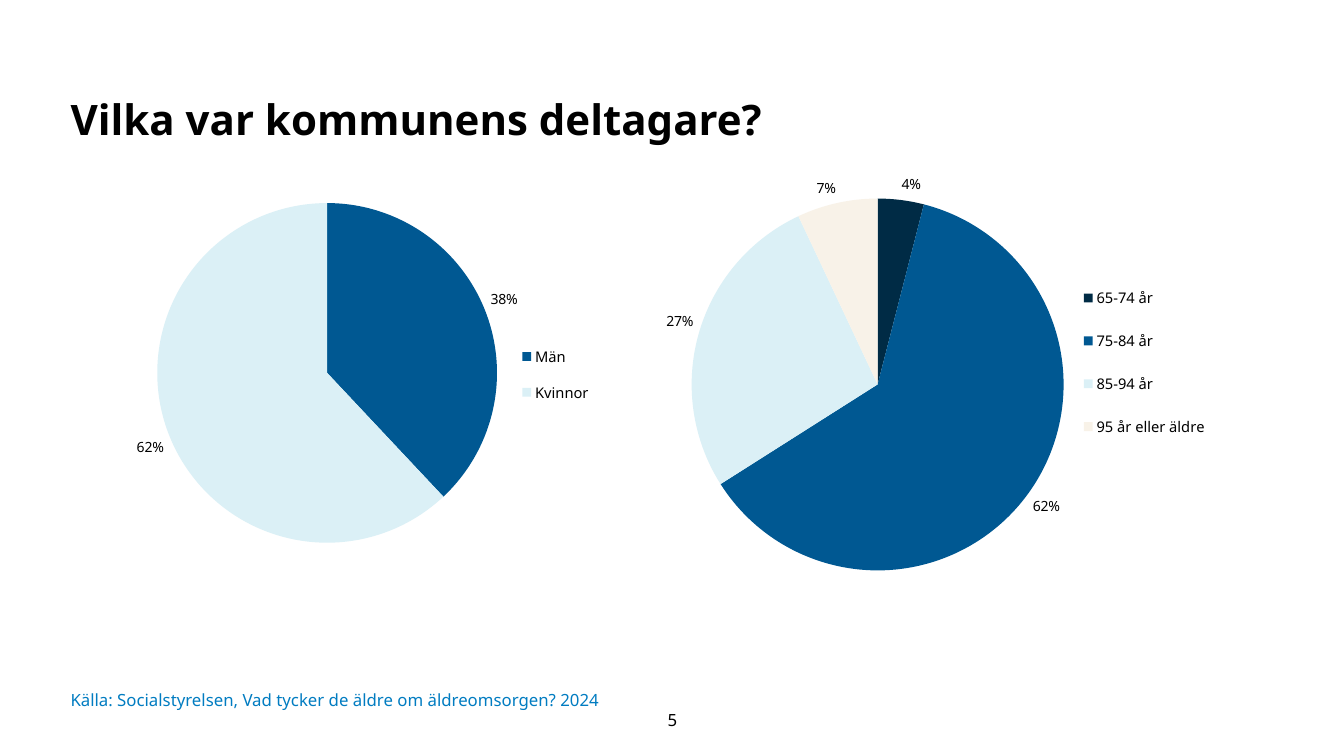
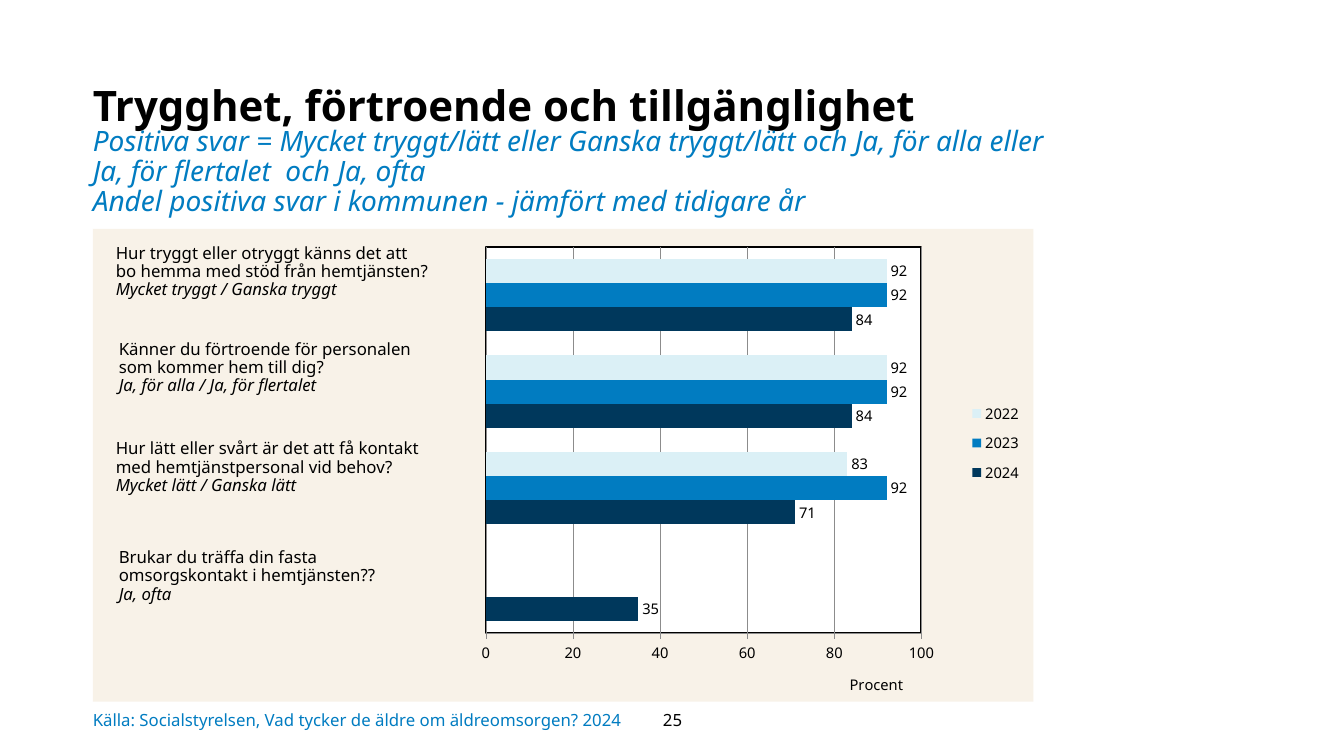
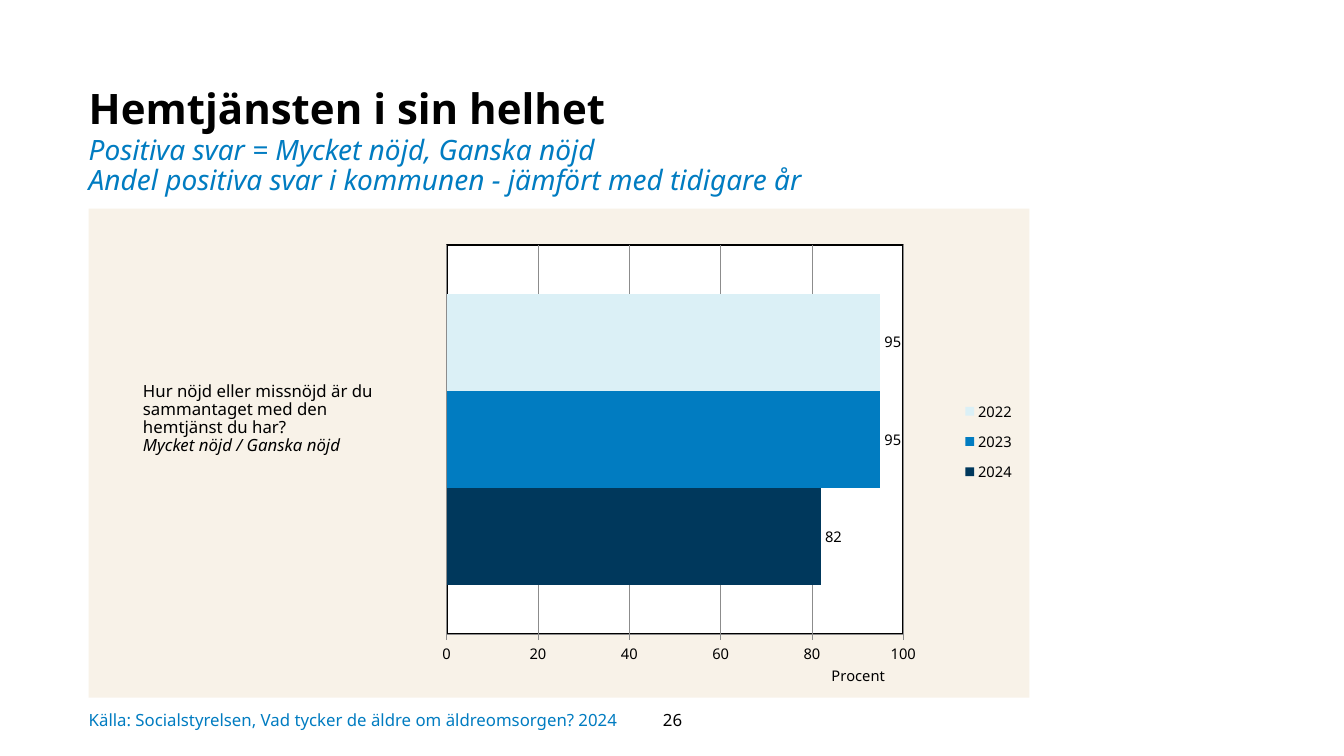
import pptx
import pptx.chart.data
import pptx.dml.color
import pptx.enum.chart
import pptx.enum.text
import pptx.oxml
import pptx.oxml.ns
import pptx.util

RGBColor = pptx.dml.color.RGBColor
BLACK = RGBColor(0x00, 0x00, 0x00)
WHITE = RGBColor(0xFF, 0xFF, 0xFF)
GRID_GREY = RGBColor(0x8C, 0x8C, 0x8C)
BRIGHT_BLUE = RGBColor(0x01, 0x7C, 0xC1)
MID_BLUE = RGBColor(0x00, 0x58, 0x92)
DARK_BLUE = RGBColor(0x00, 0x38, 0x5C)
NAVY = RGBColor(0x00, 0x2B, 0x45)
ICE_BLUE = RGBColor(0xDB, 0xF0, 0xF6)
SAND = RGBColor(0xF8, 0xF2, 0xE8)

FONT = "Noto Sans"
PX = 9144
NO_INSETS = (0, 0, 0, 0)
TITLE_INSETS = (0, 0, 10, 5)
BOX_INSETS = (10, 5, 10, 5)
SOURCE = "Källa: Socialstyrelsen, Vad tycker de äldre om äldreomsorgen? 2024"
YEAR_COLORS = {"2024": DARK_BLUE, "2023": BRIGHT_BLUE, "2022": ICE_BLUE}
TOP = pptx.enum.text.MSO_ANCHOR.TOP
MIDDLE = pptx.enum.text.MSO_ANCHOR.MIDDLE


def emu(lengths):
    """Turn lengths in px into EMU."""
    return [length * PX for length in lengths]


def set_font(font, size, color=BLACK, bold=False, italic=False):
    """Apply the deck typeface to a font."""
    font.name, font.size = FONT, pptx.util.Pt(size)
    font.bold, font.italic = bold, italic
    font.color.rgb = color


def add_text(slide, frame, paragraphs, size=12, color=BLACK, bold=False,
             insets=BOX_INSETS, anchor=TOP, spacing=0.9, align=None):
    """Add a text box from (text, italic) paragraphs."""
    text_frame = slide.shapes.add_textbox(*emu(frame)).text_frame
    text_frame.word_wrap = True
    text_frame.vertical_anchor = anchor
    (text_frame.margin_left, text_frame.margin_top,
     text_frame.margin_right, text_frame.margin_bottom) = emu(insets)
    for index, (text, italic) in enumerate(paragraphs):
        paragraph = text_frame.add_paragraph() if index else text_frame.paragraphs[0]
        paragraph.text = text
        paragraph.line_spacing = spacing
        paragraph.alignment = align
        set_font(paragraph.font, size, color, bold, italic)


def add_title(slide, frame, title):
    """Add the slide title."""
    add_text(slide, frame, [(title, False)], 30, bold=True,
             insets=TITLE_INSETS, spacing=1.1)


def add_subtitle(slide, frame, subtitle):
    """Add the blue italic explanation under the title."""
    add_text(slide, frame, [(subtitle, True)], 20, BRIGHT_BLUE, insets=NO_INSETS)


def add_question(slide, frame, question, answers):
    """Add a survey question with its positive answers in italics."""
    add_text(slide, frame, [(question, False), (answers, True)])


def add_footer(slide, source_frame, number):
    """Add the source line and the page number."""
    add_text(slide, source_frame, [(SOURCE, False)], color=BRIGHT_BLUE,
             insets=NO_INSETS, anchor=MIDDLE)
    add_text(slide, (616, 695, 102, 40), [(str(number), False)],
             anchor=MIDDLE, align=pptx.enum.text.PP_ALIGN.CENTER)


def place(part, index, frame, area, inner=False):
    """Place a chart part at a slide area, as fractions of the chart frame."""
    for old in part.findall(pptx.oxml.ns.qn("c:layout")):
        part.remove(old)
    left, top, width, height = frame
    fractions = [(area[0] - left) / width, (area[1] - top) / height]
    fractions += [size / whole for size, whole in zip(area[2:], (width, height))]
    target = '<c:layoutTarget val="inner"/>' if inner else ""
    modes = '<c:xMode val="edge"/><c:yMode val="edge"/>'
    values = "".join(f'<c:{key} val="{value:.4f}"/>'
                     for key, value in zip("xywh", fractions))
    part.insert(index, pptx.oxml.parse_xml(
        f'<c:layout {pptx.oxml.ns.nsdecls("c")}><c:manualLayout>'
        f'{target}{modes}{values}</c:manualLayout></c:layout>'))


def area_format(fill, line):
    """Return the fill and line element of a chart area."""
    return pptx.oxml.parse_xml(
        f'<c:spPr {pptx.oxml.ns.nsdecls("c", "a")}>'
        f'<a:solidFill><a:srgbClr val="{fill}"/></a:solidFill>{line}</c:spPr>')


def add_chart(slide, kind, frame, plot_area, legend_area, categories, series):
    """Add a chart with the shared font, legend and outside labels."""
    data = pptx.chart.data.CategoryChartData()
    data.categories = categories
    for name, values in series.items():
        data.add_series(name, values)
    chart = slide.shapes.add_chart(kind, *emu(frame), data).chart
    chart.has_title = False
    set_font(chart.font, 10)
    chart.has_legend = True
    chart.legend.position = pptx.enum.chart.XL_LEGEND_POSITION.RIGHT
    chart.legend.include_in_layout = False
    set_font(chart.legend.font, 10.5)
    plot = chart.plots[0]
    plot.has_data_labels = True
    plot.data_labels.position = pptx.enum.chart.XL_LABEL_POSITION.OUTSIDE_END
    place(chart._chartSpace.chart.plotArea, 0, frame, plot_area, inner=True)
    place(chart.legend._element, 1, frame, legend_area)
    return chart


def add_pie(slide, frame, plot_area, legend_area, shares, colors):
    """Add a pie chart of shares with percent labels."""
    chart = add_chart(slide, pptx.enum.chart.XL_CHART_TYPE.PIE, frame, plot_area,
                      legend_area, list(shares), {"Series 1": list(shares.values())})
    plot = chart.plots[0]
    plot.vary_by_categories = True
    labels = plot.data_labels
    labels.show_value, labels.show_percentage = False, True
    labels.number_format, labels.number_format_is_linked = "0%", False
    set_font(labels.font, 10)
    for index, color in enumerate(colors):
        fill = plot.series[0].points[index].format.fill
        fill.solid()
        fill.fore_color.rgb = color


def add_year_bars(slide, frame, plot_area, legend_area, unit_corner, years):
    """Add a bar chart on sand that compares the survey years."""
    categories = [str(n + 1) for n in range(len(years["2024"]))]
    chart = add_chart(slide, pptx.enum.chart.XL_CHART_TYPE.BAR_CLUSTERED, frame,
                      plot_area, legend_area, categories, years)
    plot = chart.plots[0]
    plot.vary_by_categories = False
    plot.gap_width, plot.overlap = 100, 0
    plot.data_labels.show_value = True
    set_font(plot.data_labels.font, 10.5)
    for series in plot.series:
        series.format.fill.solid()
        series.format.fill.fore_color.rgb = YEAR_COLORS[series.name]
    chart.category_axis.visible = False
    axis = chart.value_axis
    axis.minimum_scale, axis.maximum_scale, axis.major_unit = 0, 100, 20
    axis.major_tick_mark = pptx.enum.chart.XL_TICK_MARK.OUTSIDE
    axis.has_major_gridlines = True
    set_font(axis.tick_labels.font, 10.5)
    for line in (axis.format.line, axis.major_gridlines.format.line):
        line.color.rgb, line.width = GRID_GREY, pptx.util.Pt(0.5)
    unit = axis.axis_title.text_frame.paragraphs[0]
    unit.text = "Procent"
    set_font(unit.font, 10.5)
    place(axis.axis_title._element, 1, frame, unit_corner)
    border = f'<a:ln w="19050"><a:solidFill><a:srgbClr val="{BLACK}"/></a:solidFill></a:ln>'
    chart._chartSpace.chart.plotArea.append(area_format(WHITE, border))
    chart._chartSpace.chart.addnext(area_format(SAND, "<a:ln><a:noFill/></a:ln>"))


def build_participants(slide):
    """Build the slide about the participants."""
    add_title(slide, (70, 88, 1063, 53), "Vilka var kommunens deltagare?")
    add_pie(slide, (22, 129, 679, 471), (156, 185, 337, 370), (511, 328, 80, 87),
            {"Män": 38, "Kvinnor": 62}, (MID_BLUE, ICE_BLUE))
    add_pie(slide, (592, 160, 679, 420), (686, 197, 369, 369), (1065, 263, 140, 193),
            {"65-74 år": 4, "75-84 år": 62, "85-94 år": 27, "95 år eller äldre": 7},
            (NAVY, MID_BLUE, ICE_BLUE, SAND))
    add_footer(slide, (70, 676, 556, 40), 5)


def build_safety(slide):
    """Build the slide about safety, trust and availability."""
    add_title(slide, (92, 74, 998, 56), "Trygghet, förtroende och tillgänglighet")
    add_subtitle(slide, (92, 126, 968, 104),
                 "Positiva svar = Mycket tryggt/lätt eller Ganska tryggt/lätt och Ja, "
                 "för alla eller Ja, för flertalet  och Ja, ofta\n"
                 "Andel positiva svar i kommunen - jämfört med tidigare år")
    add_year_bars(slide, (92, 227, 933, 469), (482, 245, 432, 383),
                  (955, 391, 65, 97), (840, 665),
                  {"2024": (35, 71, 84, 84), "2023": (None, 92, 92, 92),
                   "2022": (None, 83, 92, 92)})
    questions = (
        ((105, 238, 348, 71),
         "Hur tryggt eller otryggt känns det att\nbo hemma med stöd från hemtjänsten?",
         "Mycket tryggt / Ganska tryggt"),
        ((108, 333, 326, 71),
         "Känner du förtroende för personalen\nsom kommer hem till dig?",
         "Ja, för alla / Ja, för flertalet"),
        ((105, 432, 323, 71),
         "Hur lätt eller svårt är det att få kontakt\nmed hemtjänstpersonal vid behov?",
         "Mycket lätt / Ganska lätt"),
        ((108, 540, 326, 71),
         "Brukar du träffa din fasta omsorgskontakt i hemtjänsten??",
         "Ja, ofta"),
    )
    for frame, question, answers in questions:
        add_question(slide, frame, question, answers)
    add_footer(slide, (92, 696, 591, 39), 25)


def build_overall(slide):
    """Build the slide about home care as a whole."""
    add_title(slide, (88, 77, 1002, 60), "Hemtjänsten i sin helhet")
    add_subtitle(slide, (88, 135, 956, 72),
                 "Positiva svar = Mycket nöjd, Ganska nöjd\n"
                 "Andel positiva svar i kommunen - jämfört med tidigare år")
    add_year_bars(slide, (88, 207, 933, 485), (443, 243, 453, 386),
                  (948, 388, 65, 100), (822, 656),
                  {"2024": (82,), "2023": (95,), "2022": (95,)})
    add_question(slide, (132, 375, 283, 91),
                 "Hur nöjd eller missnöjd är du sammantaget med den hemtjänst du har?",
                 "Mycket nöjd / Ganska nöjd")
    add_footer(slide, (88, 695, 898, 40), 26)


def main():
    """Build and save the presentation."""
    deck = pptx.Presentation()
    deck.slide_width, deck.slide_height = emu((1333, 750))
    for build in (build_participants, build_safety, build_overall):
        build(deck.slides.add_slide(deck.slide_layouts[6]))
    deck.save("out.pptx")


if __name__ == "__main__":
    main()
